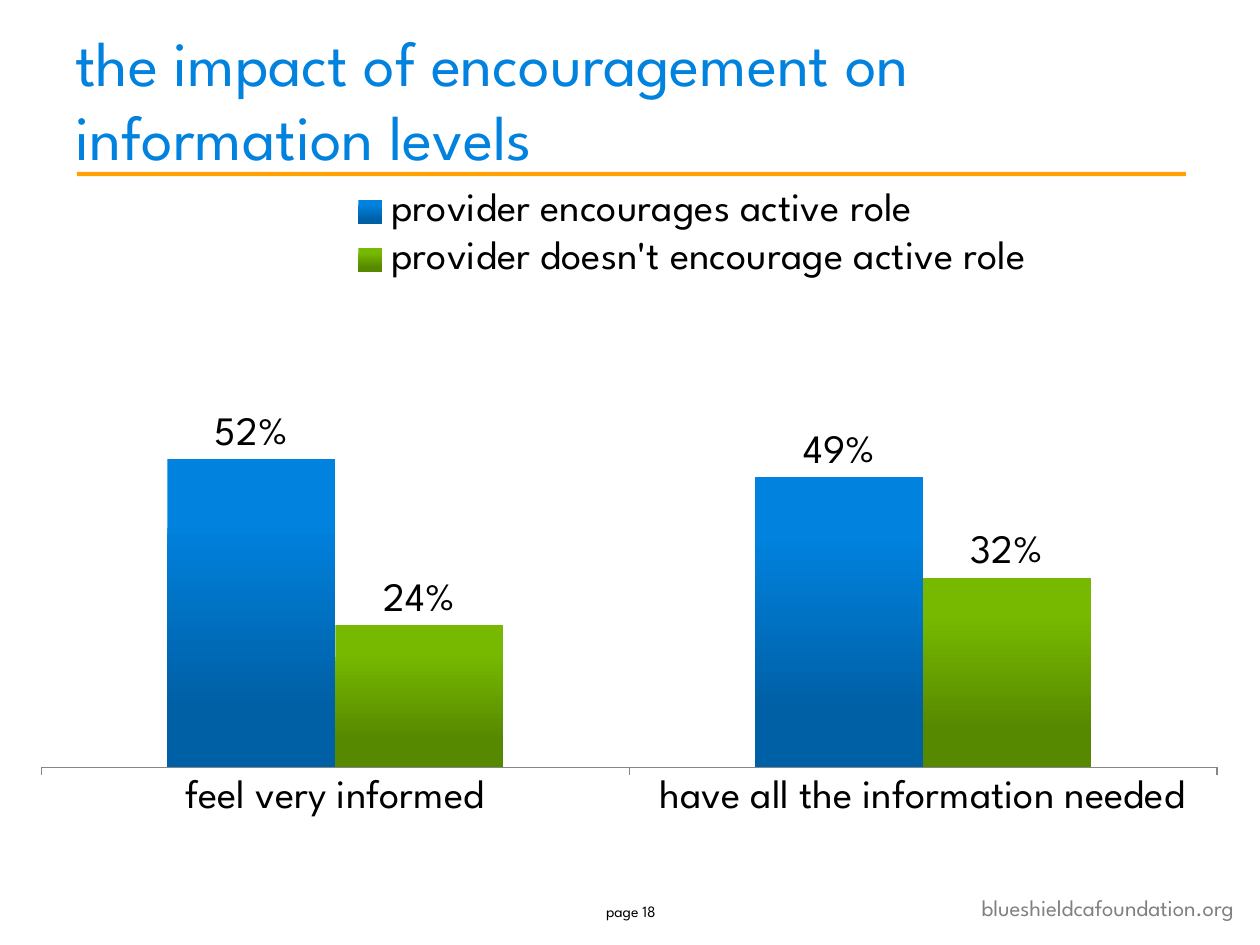
import pptx
import pptx.util
import pptx.dml.color
import pptx.chart.data
import pptx.enum.chart
import pptx.enum.shapes
import pptx.enum.text
import pptx.oxml

Pt = pptx.util.Pt
RGB = pptx.dml.color.RGBColor
ALIGN = pptx.enum.text.PP_ALIGN
ANCHOR = pptx.enum.text.MSO_ANCHOR
FACE = "League Spartan"
BLUE = RGB(0x00, 0x82, 0xDE)
NAVY = RGB(0x00, 0x60, 0xA6)
GREEN = RGB(0x76, 0xB9, 0x00)
MOSS = RGB(0x57, 0x89, 0x00)
GOLD = RGB(0xFF, 0xA1, 0x00)
GREY = RGB(0x7E, 0x80, 0x82)
LINE = RGB(0x86, 0x86, 0x86)
BLACK = RGB(0, 0, 0)
PX = 914400 // 126


def write(box, text, size, color, align, anchor):
    shape = slide.shapes.add_textbox(*[n * PX for n in box])
    frame = shape.text_frame
    frame.word_wrap = True
    frame.vertical_anchor = anchor
    para = frame.paragraphs[0]
    para.text = text
    para.alignment = align
    para.font.name = FACE
    para.font.size = Pt(size)
    para.font.color.rgb = color
    return para


def layout(box, inner):
    target = '<c:layoutTarget val="inner"/>' if inner else ""
    modes = "".join(f'<c:{k}Mode val="edge"/>' for k in "xy")
    sizes = "".join(f'<c:{k} val="{v}"/>' for k, v in zip("xywh", box))
    return pptx.oxml.parse_xml(
        '<c:layout xmlns:c="http://schemas.openxmlformats.org/drawingml/2006/chart">'
        f"<c:manualLayout>{target}{modes}{sizes}</c:manualLayout></c:layout>")


deck = pptx.Presentation()
deck.slide_width = 1260 * PX
deck.slide_height = 945 * PX
slide = deck.slides.add_slide(deck.slide_layouts[6])

write((907, 888, 339, 40), "blueshieldcafoundation.org", 13, GREY,
      ALIGN.RIGHT, ANCHOR.TOP)

rule = slide.shapes.add_shape(
    pptx.enum.shapes.MSO_SHAPE.ROUNDED_RECTANGLE,
    *[n * PX for n in (77, 172, 1109, 4)])
rule.shadow.inherit = False
rule.fill.solid()
rule.fill.fore_color.rgb = GOLD
rule.line.fill.background()

title = write((63, 32, 1134, 147),
              "the impact of encouragement on information levels",
              36, BLUE, ALIGN.LEFT, ANCHOR.BOTTOM)
title.line_spacing = Pt(42)
write((575, 878, 112, 66), "page 18", 9, BLACK, ALIGN.CENTER, ANCHOR.MIDDLE)

data = pptx.chart.data.CategoryChartData(number_format="0%")
data.categories = ["feel very informed", "have all the information needed"]
data.add_series("provider encourages active role", (0.52, 0.49))
data.add_series("provider doesn't encourage active role", (0.24, 0.32))
chart = slide.shapes.add_chart(
    pptx.enum.chart.XL_CHART_TYPE.COLUMN_CLUSTERED,
    *[n * PX for n in (0, 168, 1260, 756)], data).chart
chart.has_title = False
chart.font.name = FACE
chart.font.size = Pt(18)
chart.font.color.rgb = BLACK

axis = chart.category_axis
axis.tick_labels.font.size = Pt(23)
axis.major_tick_mark = pptx.enum.chart.XL_TICK_MARK.OUTSIDE
axis.format.line.color.rgb = LINE
scale = chart.value_axis
scale.minimum_scale = 0
scale.maximum_scale = 0.8
scale.has_major_gridlines = False
scale.visible = False

plot = chart.plots[0]
plot.gap_width = 150
plot.overlap = 0
plot.vary_by_categories = False
for series, top, base in zip(plot.series, (BLUE, GREEN), (NAVY, MOSS)):
    fill = series.format.fill
    fill.gradient()
    fill.gradient_angle = 270
    for stop, color, place in zip(fill.gradient_stops, (top, base), (0.2, 0.8)):
        stop.color.rgb = color
        stop.position = place
    labels = series.data_labels
    labels.show_value = True
    labels.number_format = "0%"
    labels.number_format_is_linked = False
    labels.position = pptx.enum.chart.XL_LABEL_POSITION.OUTSIDE_END
    labels.font.size = Pt(23)

chart.has_legend = True
key = chart.legend
key.position = pptx.enum.chart.XL_LEGEND_POSITION.RIGHT
key.include_in_layout = False
key.font.size = Pt(23)

area = chart.element.xpath("c:chart/c:plotArea")[0]
legend = chart.element.xpath("c:chart/c:legend")[0]
for part in (area, legend):
    for old in part.xpath("c:layout"):
        part.remove(old)
area.insert(0, layout((0.033, 0.166, 0.933, 0.627), True))
legend.xpath("c:overlay")[0].addprevious(layout((0.27, 0.02, 0.56, 0.14), False))

deck.save("out.pptx")
